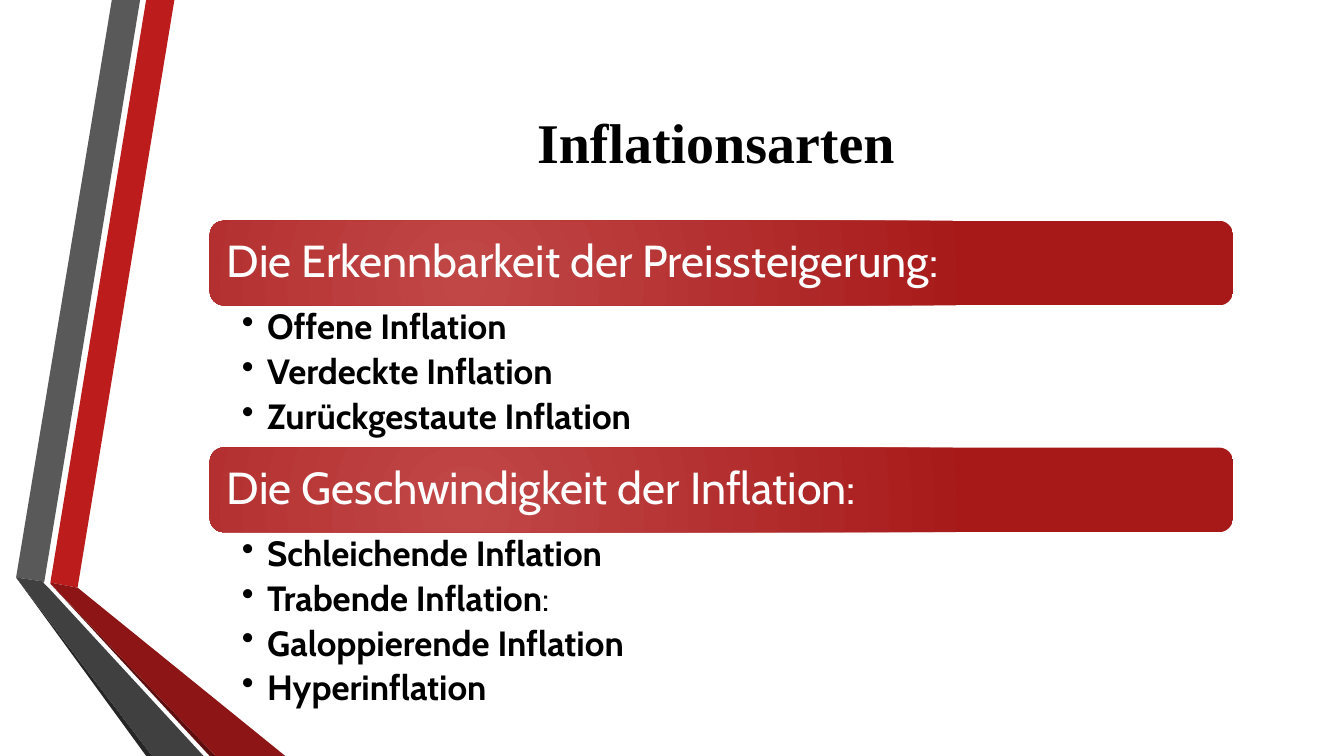
from lxml.etree import SubElement
from pptx import Presentation
from pptx.dml.color import RGBColor
from pptx.enum.shapes import MSO_SHAPE
from pptx.enum.text import MSO_ANCHOR, PP_ALIGN
from pptx.oxml.ns import qn
from pptx.util import Inches, Pt

TITLE_FONT = {"name": "Times New Roman", "size": Pt(40), "bold": True}
HEADING_FONT = {"name": "Cabin", "size": Pt(32), "bold": False}
ITEM_FONT = {"name": "Cabin", "size": Pt(25)}

GROUP_LEFT, GROUP_TOP, GROUP_WIDTH = 2.08, 2.19, 10.15
BAR_HEIGHT, ITEM_HEIGHT = 0.84, 0.47

INFLATION_GROUPS = [
    ("Die Erkennbarkeit der Preissteigerung:",
     ["Offene Inflation", "Verdeckte Inflation", "Zurückgestaute Inflation"]),
    ("Die Geschwindigkeit der Inflation:",
     ["Schleichende Inflation", "Trabende Inflation:",
      "Galoppierende Inflation", "Hyperinflation"]),
]

# Folded ribbons along the left edge: colour and corner points
RIBBONS = [
    ("BC1C1C", [(0.5, 5.78), (0.77, 5.83), (1.73, 0), (1.45, 0)]),
    ("595959", [(1.39, 0), (1.11, 0), (0.16, 5.73), (0.44, 5.77)]),
    ("262626", [(0.16, 5.73), (1.45, 7.5), (1.51, 7.5)]),
    ("5E0E0E", [(0.5, 5.79), (2.08, 7.5), (2.14, 7.5)]),
    ("8D1515", [(0.5, 5.79), (2.14, 7.5), (2.83, 7.5), (0.77, 5.83), (0.5, 5.78)]),
    ("404040", [(2.02, 7.5), (0.48, 5.83), (0.43, 5.78), (0.44, 5.77),
                (0.16, 5.73), (1.51, 7.5)]),
]


def colour(hex_value):
    return RGBColor.from_string(hex_value)


def apply_format(target, values):
    for attribute, value in values.items():
        setattr(target, attribute, value)


def add_run(paragraph, text, font, hex_value):
    run = paragraph.add_run()
    run.text = text
    apply_format(run.font, font)
    run.font.color.rgb = colour(hex_value)


def add_ribbon(slide, hex_value, corners):
    points = [(Inches(x), Inches(y)) for x, y in corners]
    builder = slide.shapes.build_freeform(*points[0])
    builder.add_line_segments(points[1:], close=True)
    ribbon = builder.convert_to_shape()
    ribbon.shadow.inherit = False
    ribbon.fill.solid()
    ribbon.fill.fore_color.rgb = colour(hex_value)
    ribbon.line.fill.background()


def set_title(slide, text):
    title = slide.shapes.title
    apply_format(title, {"left": Inches(1.62), "top": Inches(0.75),
                         "width": Inches(10.96), "height": Inches(1.3)})
    title.text_frame.vertical_anchor = MSO_ANCHOR.MIDDLE
    paragraph = title.text_frame.paragraphs[0]
    paragraph.alignment = PP_ALIGN.CENTER
    add_run(paragraph, text, TITLE_FONT, "000000")


def fill_radial(shape, inner, outer):
    shape.fill.gradient()
    for stop, hex_value in zip(shape.fill.gradient_stops, (inner, outer)):
        stop.color.rgb = colour(hex_value)
    gradient = shape._element.spPr.find(qn("a:gradFill"))
    gradient.remove(gradient.find(qn("a:lin")))
    circle = SubElement(gradient, qn("a:path"), {"path": "circle"})
    SubElement(circle, qn("a:fillToRect"),
               {"l": "50000", "t": "100000", "r": "100000", "b": "50000"})


def add_heading_bar(slide, top, text):
    bar = slide.shapes.add_shape(
        MSO_SHAPE.ROUNDED_RECTANGLE, Inches(GROUP_LEFT), Inches(top),
        Inches(GROUP_WIDTH), Inches(BAR_HEIGHT))
    bar.shadow.inherit = False
    bar.line.fill.background()
    fill_radial(bar, "C14747", "A71919")
    apply_format(bar.text_frame, {
        "word_wrap": True, "vertical_anchor": MSO_ANCHOR.MIDDLE,
        "margin_left": Inches(0.13), "margin_right": Inches(0.13)})
    paragraph = bar.text_frame.paragraphs[0]
    apply_format(paragraph, {"alignment": PP_ALIGN.LEFT, "line_spacing": 0.9})
    add_run(paragraph, text, HEADING_FONT, "FFFFFF")


def add_bullet(paragraph):
    properties = paragraph._p.get_or_add_pPr()
    properties.set("marL", str(Inches(0.25)))
    properties.set("indent", str(Inches(-0.25)))
    SubElement(properties, qn("a:buChar"), {"char": "•"})


def add_item_list(slide, top, items):
    box = slide.shapes.add_textbox(
        Inches(GROUP_LEFT), Inches(top),
        Inches(GROUP_WIDTH), Inches(ITEM_HEIGHT * len(items)))
    frame = box.text_frame
    apply_format(frame, {
        "word_wrap": True, "margin_left": Inches(0.32), "margin_right": Inches(0.25),
        "margin_top": Inches(0.04), "margin_bottom": Inches(0.04)})
    for index, item in enumerate(items):
        paragraph = frame.add_paragraph() if index else frame.paragraphs[0]
        apply_format(paragraph, {"level": 1, "line_spacing": 0.9, "space_after": Pt(5)})
        add_bullet(paragraph)
        # A closing colon stays in regular weight
        term, colon, _ = item.partition(":")
        add_run(paragraph, term, ITEM_FONT | {"bold": True}, "000000")
        if colon:
            add_run(paragraph, colon, ITEM_FONT | {"bold": False}, "000000")


def main():
    presentation = Presentation()
    apply_format(presentation, {"slide_width": Inches(13.33),
                                "slide_height": Inches(7.5)})
    slide = presentation.slides.add_slide(presentation.slide_layouts[5])

    # Side decoration
    for hex_value, corners in RIBBONS:
        add_ribbon(slide, hex_value, corners)

    set_title(slide, "Inflationsarten")

    # Heading bars, each followed by its list
    top = GROUP_TOP
    for heading, items in INFLATION_GROUPS:
        add_heading_bar(slide, top, heading)
        add_item_list(slide, top + BAR_HEIGHT, items)
        top += BAR_HEIGHT + ITEM_HEIGHT * len(items)

    presentation.save("out.pptx")


if __name__ == "__main__":
    main()
